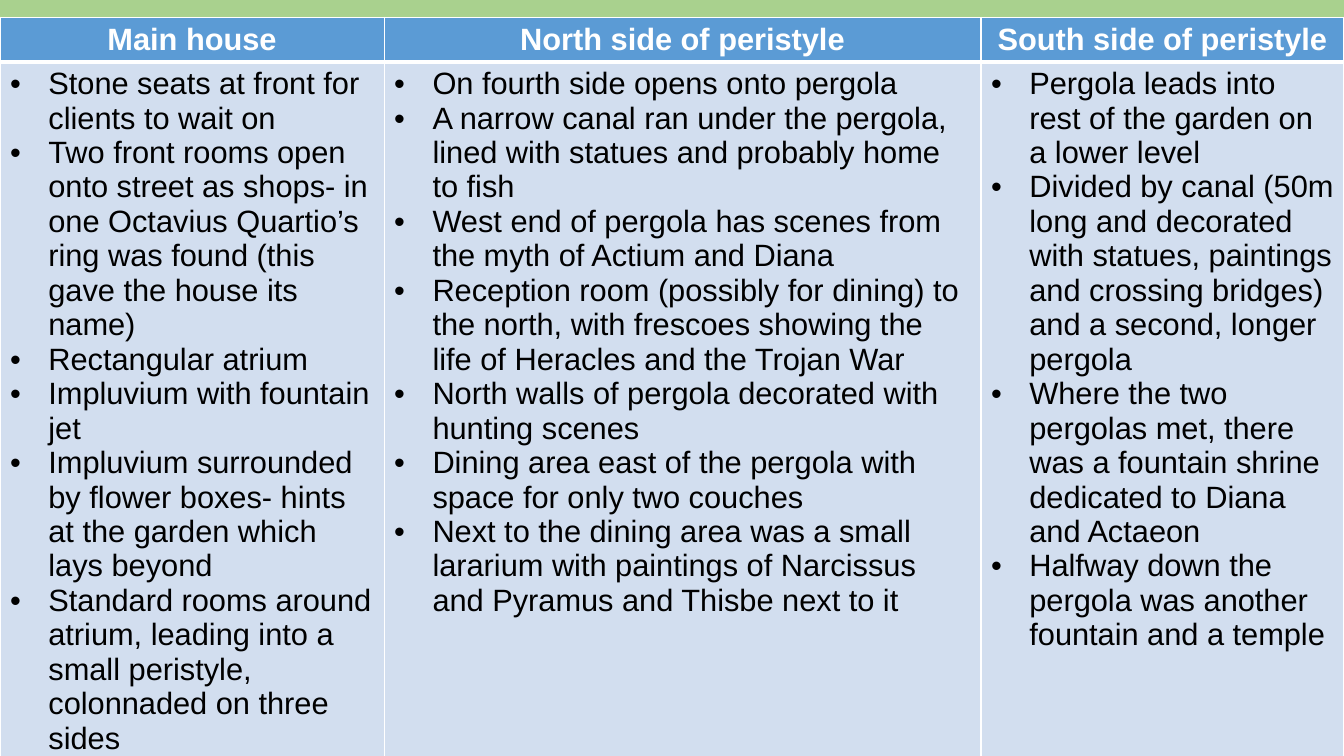
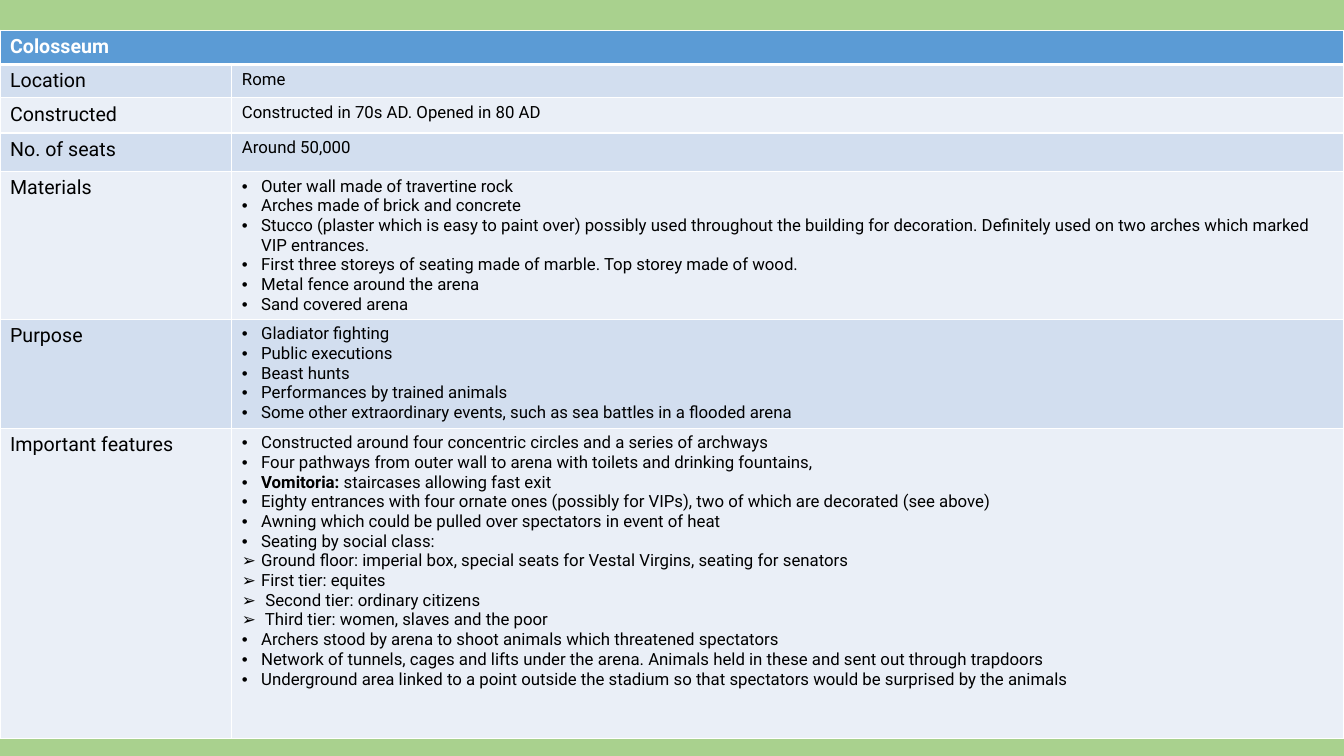
"""Build two table slides on Roman buildings: a house plan and the Colosseum."""
from lxml.etree import SubElement
from pptx import Presentation
from pptx.dml.color import RGBColor
from pptx.enum.text import PP_ALIGN as Align
from pptx.oxml import parse_xml
from pptx.oxml.ns import nsdecls, qn
from pptx.util import Inches, Pt

BACKGROUND = "A9D18E"
HEADER = "5B9BD5"
BANDS = ("D2DEEF", "EAEFF7")
WHITE = "FFFFFF"
BLACK = "000000"

HOUSE = {
    "Main house": [
        "Stone seats at front for clients to wait on",
        "Two front rooms open onto street as shops- in one Octavius Quartio’s ring was found "
        "(this gave the house its name)",
        "Rectangular atrium",
        "Impluvium with fountain jet",
        "Impluvium surrounded by flower boxes- hints at the garden which lays beyond",
        "Standard rooms around atrium, leading into a small peristyle, colonnaded on three sides",
    ],
    "North side of peristyle": [
        "On fourth side opens onto pergola",
        "A narrow canal ran under the pergola, lined with statues and probably home to fish",
        "West end of pergola has scenes from the myth of Actium and Diana",
        "Reception room (possibly for dining) to the north, with frescoes showing the life of "
        "Heracles and the Trojan War",
        "North walls of pergola decorated with hunting scenes",
        "Dining area east of the pergola with space for only two couches",
        "Next to the dining area was a small lararium with paintings of Narcissus and Pyramus "
        "and Thisbe next to it",
    ],
    "South side of peristyle": [
        "Pergola leads into rest of the garden on a lower level",
        "Divided by canal (50m long and decorated with statues, paintings and crossing bridges) "
        "and a second, longer pergola",
        "Where the two pergolas met, there was a fountain shrine dedicated to Diana and Actaeon",
        "Halfway down the pergola was another fountain and a temple",
    ],
}

COLOSSEUM = {
    "Location": "Rome",
    "Constructed": "Constructed in 70s AD. Opened in 80 AD",
    "No. of seats": "Around 50,000",
    "Materials": [
        "Outer wall made of travertine rock",
        "Arches made of brick and concrete",
        "Stucco (plaster which is easy to paint over) possibly used throughout the building for "
        "decoration. Definitely used on two arches which marked VIP entrances.",
        "First three storeys of seating made of marble. Top storey made of wood.",
        "Metal fence around the arena",
        "Sand covered arena",
    ],
    "Purpose": [
        "Gladiator fighting",
        "Public executions",
        "Beast hunts",
        "Performances by trained animals",
        "Some other extraordinary events, such as sea battles in a flooded arena",
    ],
    "Important features": [
        "Constructed around four concentric circles and a series of archways",
        "Four pathways from outer wall to arena with toilets and drinking fountains,",
        {"lead": "Vomitoria: ", "text": "staircases allowing fast exit"},
        "Eighty entrances with four ornate ones (possibly for VIPs), two of which are decorated "
        "(see above)",
        "Awning which could be pulled over spectators in event of heat",
        "Seating by social class:",
        {"marker": "➢", "text": "Ground floor: imperial box, special seats for Vestal Virgins, "
                                "seating for senators"},
        {"marker": "➢", "text": "First tier: equites"},
        {"marker": "➢", "text": " Second tier: ordinary citizens"},
        {"marker": "➢", "text": " Third tier: women, slaves and the poor"},
        "Archers stood by arena to shoot animals which threatened spectators",
        "Network of tunnels, cages and lifts under the arena. Animals held in these and sent out "
        "through trapdoors",
        "Underground area linked to a point outside the stadium so that spectators would be "
        "surprised by the animals",
    ],
}


def color(value):
    return RGBColor.from_string(value)


def add_bullet(paragraph, marker, indent):
    properties = paragraph._p.get_or_add_pPr()
    properties.set("marL", str(Inches(indent)))
    properties.set("indent", str(-Inches(indent)))
    SubElement(properties, qn("a:buFont")).set("typeface", "Arial")
    SubElement(properties, qn("a:buChar")).set("char", marker)


def write(frame, content, font, size, ink=BLACK, bold=False, align=Align.LEFT, indent=0):
    """Fill a frame with one plain line, or with a list of bullets."""
    bulleted = isinstance(content, list)
    for number, item in enumerate(content if bulleted else [content]):
        paragraph = frame.add_paragraph() if number else frame.paragraphs[0]
        paragraph.alignment = align
        entry = item if isinstance(item, dict) else {"text": item}
        if bulleted:
            add_bullet(paragraph, entry.get("marker", "•"), indent)
        for text, strong in ((entry.get("lead"), True), (entry["text"], bold)):
            if text:
                run = paragraph.add_run()
                run.text = text
                run.font.name, run.font.size, run.font.bold = font, Pt(size), strong
                run.font.color.rgb = color(ink)


def style_cell(cell, row):
    """Colour a cell by its row and rule it in white, thickest under the header."""
    cell.fill.solid()
    cell.fill.fore_color.rgb = color(BANDS[(row - 1) % 2] if row else HEADER)
    widths = {"L": 1, "R": 1, "T": 3 if row == 1 else 1, "B": 1 if row else 3}
    properties = cell._tc.get_or_add_tcPr()
    for position, (side, width) in enumerate(widths.items()):
        properties.insert(position, parse_xml(
            f'<a:ln{side} {nsdecls("a")} w="{Pt(width)}"><a:solidFill>'
            f'<a:srgbClr val="{WHITE}"/></a:solidFill></a:ln{side}>'))


def add_table(deck, top, widths, heights):
    """Add a slide that holds one styled, full-width table."""
    slide = deck.slides.add_slide(deck.slide_layouts[6])
    table = slide.shapes.add_table(len(heights), len(widths), 0, Inches(top),
                                   deck.slide_width, Inches(sum(heights))).table
    table.horz_banding = False
    for column, width in zip(table.columns, widths):
        column.width = Inches(width)
    for number, (row, height) in enumerate(zip(table.rows, heights)):
        row.height = Inches(height)
        for cell in row.cells:
            style_cell(cell, number)
    return table


def add_house(deck):
    table = add_table(deck, 0.17, (3.81, 5.92, 3.6), (0.44, 6.56))
    for column, (area, details) in enumerate(HOUSE.items()):
        write(table.cell(0, column).text_frame, area, "Arial", 22, WHITE, True, Align.CENTER)
        write(table.cell(1, column).text_frame, details, "Arial", 22, indent=0.38)


def add_colosseum(deck):
    table = add_table(deck, 0.3, (2.3, 11.03), (0.34, 0.31, 0.35, 0.38, 1.23, 1.08, 3.08))
    table.cell(0, 0).merge(table.cell(0, 1))
    write(table.cell(0, 0).text_frame, "Colosseum", "Roboto", 14, WHITE, True)
    for row, (topic, details) in enumerate(COLOSSEUM.items(), 1):
        write(table.cell(row, 0).text_frame, topic, "Roboto", 14)
        write(table.cell(row, 1).text_frame, details, "Roboto", 12, indent=0.19)


def main():
    deck = Presentation()
    deck.slide_width, deck.slide_height = Inches(13.33), Inches(7.5)
    backdrop = deck.slide_master.background.fill
    backdrop.solid()
    backdrop.fore_color.rgb = color(BACKGROUND)
    add_house(deck)
    add_colosseum(deck)
    deck.save("out.pptx")


if __name__ == "__main__":
    main()
